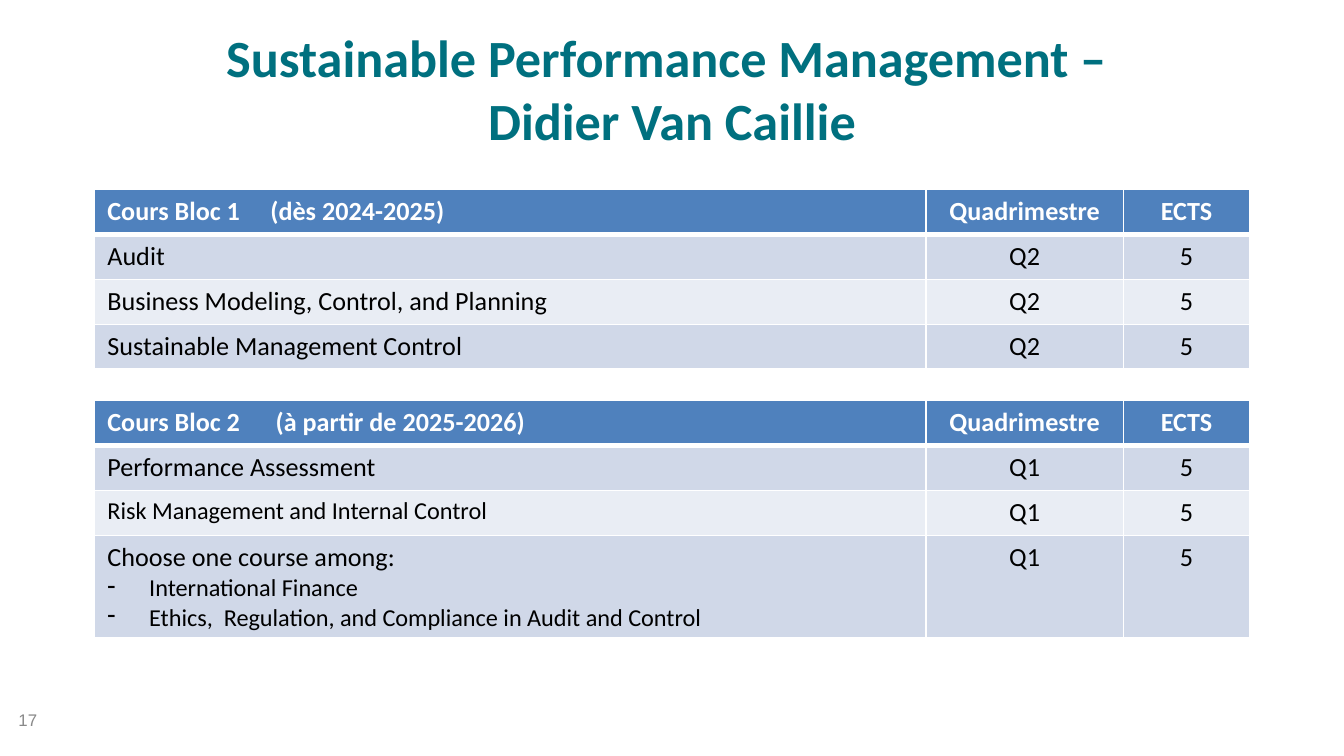
from lxml import etree
from pptx import Presentation
from pptx import util as u
from pptx.dml.color import RGBColor
from pptx.enum import text
from pptx.oxml.ns import qn

WHITE, BLACK, TEAL, GREY = "FFFFFF", "000000", "00707F", "898989"
HEADER_FILL, BANDS = "4F81BD", ("D0D8E8", "E9EDF4")
COLUMN_WIDTHS = (15.72, 3.73, 2.39)
ROW_HEIGHT = 0.85
DASH_INDENT = 0.79
CENTER, LEFT = text.PP_ALIGN.CENTER, text.PP_ALIGN.LEFT

# Each course is (lines, quadrimestre, ECTS); each line is (wording, size, dashed)
BLOC_1 = [
    ([("Audit", 14, False)], "Q2", "5"),
    ([("Business Modeling, Control, and Planning", 14, False)], "Q2", "5"),
    ([("Sustainable Management Control", 14, False)], "Q2", "5"),
]
BLOC_2 = [
    ([("Performance Assessment", 14, False)], "Q1", "5"),
    ([("Risk Management and Internal Control", 13, False)], "Q1", "5"),
    ([("Choose one course among:", 14, False),
      ("International Finance", 13, True),
      ("Ethics,  Regulation, and Compliance in Audit and Control", 13, True)],
     "Q1", "5"),
]


def rgb(value):
    return RGBColor.from_string(value)


def add_run(paragraph, wording, size, color, bold=False, face="Calibri"):
    run = paragraph.add_run()
    run.text = wording
    run.font.size = u.Pt(size)
    run.font.name = face
    run.font.bold = bold
    run.font.color.rgb = rgb(color)


def add_dash(paragraph):
    props = paragraph._p.get_or_add_pPr()
    props.set("marL", str(u.Cm(DASH_INDENT)))
    props.set("indent", str(-u.Cm(DASH_INDENT)))
    etree.SubElement(props, qn("a:buChar"), char="-")


def add_tab_stop(paragraph, position):
    stops = etree.SubElement(paragraph._p.get_or_add_pPr(), qn("a:tabLst"))
    etree.SubElement(stops, qn("a:tab"), pos=str(u.Cm(position)), algn="l")


def style_cell(cell, fill, bottom_width):
    # Borders come before the fill in the cell properties
    props = cell._tc.get_or_add_tcPr()
    for side, width in (("L", 1), ("R", 1), ("T", 1), ("B", bottom_width)):
        border = etree.SubElement(props, qn(f"a:ln{side}"), w=str(u.Pt(width)))
        paint = etree.SubElement(border, qn("a:solidFill"))
        etree.SubElement(paint, qn("a:srgbClr"), val=WHITE)
    cell.fill.solid()
    cell.fill.fore_color.rgb = rgb(fill)
    cell.margin_left = cell.margin_right = u.Cm(0.25)
    cell.margin_top = cell.margin_bottom = u.Cm(0.12)


def add_text_box(slide, box):
    frame = slide.shapes.add_textbox(*map(u.Cm, box)).text_frame
    frame.word_wrap = True
    return frame


def add_title(slide, box):
    title = add_text_box(slide, box).paragraphs[0]
    title.alignment = CENTER
    add_run(title, "Sustainable Performance Management – ", 28, TEAL, True)
    title.add_line_break()
    add_run(title, "Didier Van Caillie", 28, TEAL, True)


def add_page_number(slide, box):
    frame = add_text_box(slide, box)
    frame.vertical_anchor = text.MSO_ANCHOR.MIDDLE
    add_run(frame.paragraphs[0], "17", 9, GREY, face="Arial")


def add_course_table(slide, box, bloc, period, period_stop, courses):
    rows = len(courses) + 1
    table = slide.shapes.add_table(rows, 3, *map(u.Cm, box)).table
    for column, width in zip(table.columns, COLUMN_WIDTHS):
        column.width = u.Cm(width)
    for row in table.rows:
        row.height = u.Cm(ROW_HEIGHT)
    table.rows[rows - 1].height = u.Cm(box[3] - ROW_HEIGHT * (rows - 1))

    # Header, with the period set off by a tab stop
    header = [[(f"{bloc}\t{period}", 14, False)], "Quadrimestre", "ECTS"]
    for r, (lines, term, credits) in enumerate([header, *courses]):
        is_header = r == 0
        fill = HEADER_FILL if is_header else BANDS[(r - 1) % 2]
        color = WHITE if is_header else BLACK
        contents = (lines, [(term, 14, False)], [(credits, 14, False)])
        for c, cell_lines in enumerate(contents):
            cell = table.cell(r, c)
            style_cell(cell, fill, 3 if is_header else 1)
            for i, (wording, size, dashed) in enumerate(cell_lines):
                frame = cell.text_frame
                paragraph = frame.add_paragraph() if i else frame.paragraphs[0]
                paragraph.alignment = CENTER if c else LEFT
                if dashed:
                    add_dash(paragraph)
                if is_header and c == 0:
                    add_tab_stop(paragraph, period_stop)
                add_run(paragraph, wording, size, color, is_header)


def main():
    deck = Presentation()
    deck.slide_width, deck.slide_height = u.Cm(25.4), u.Cm(14.29)
    slide = deck.slides.add_slide(deck.slide_layouts[6])
    width = sum(COLUMN_WIDTHS)
    add_page_number(slide, (0.1, 13.23, 5.92, 0.76))
    add_course_table(slide, (1.78, 3.58, width, 3.4),
                     "Cours Bloc 1", "(dès 2024-2025)", 3.08, BLOC_1)
    add_title(slide, (1.27, 0.36, 22.86, 1.57))
    add_course_table(slide, (1.78, 7.57, width, 4.45),
                     "Cours Bloc 2", "(à partir de 2025-2026)", 3.18, BLOC_2)
    deck.save("out.pptx")


if __name__ == "__main__":
    main()
